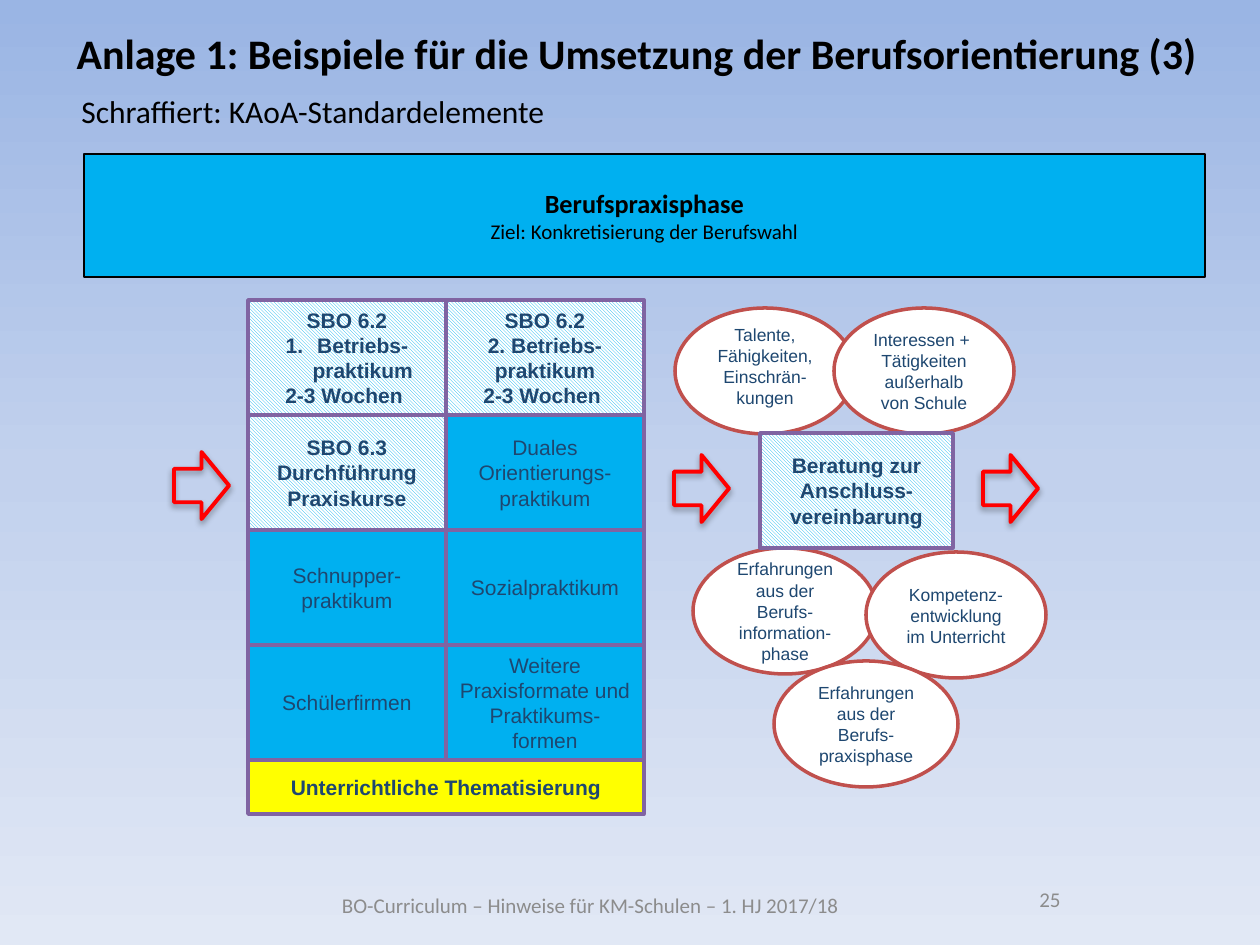
import copy
import dataclasses
import pptx
import pptx.dml.color
import pptx.enum.dml
import pptx.enum.shapes
import pptx.enum.text
import pptx.oxml
import pptx.oxml.ns
import pptx.util

FORM = pptx.enum.shapes.MSO_SHAPE
ALIGN = pptx.enum.text.PP_ALIGN
ANCHOR = pptx.enum.text.MSO_ANCHOR


@dataclasses.dataclass(frozen=True)
class Theme:
    black: str = "000000"
    white: str = "FFFFFF"
    grey: str = "8C8C8C"
    navy: str = "1E4770"
    blue: str = "00B0F0"
    yellow: str = "FFFF00"
    purple: str = "8064A2"
    brick: str = "C0504D"
    red: str = "FF0000"
    sky: tuple = ("9AB5E4", "C2D1ED", "E1E8F5")
    head: int = 24
    sub: int = 18
    lead: int = 15
    body: int = 12
    small: int = 10
    sans: str = "Calibri"
    plain: str = "Arial"


def px(num):
    return pptx.util.Emu(round(num * 914400 / 126))


def rgb(code):
    return pptx.dml.color.RGBColor.from_string(code)


class Deck:
    def __init__(self, theme):
        self.theme = theme
        self.show = pptx.Presentation()
        self.show.slide_width = px(1260)
        self.show.slide_height = px(945)
        self.slide = self.show.slides.add_slide(self.show.slide_layouts[5])

    def sky(self):
        fill = self.slide.background.fill
        fill.gradient()
        fill.gradient_angle = 270
        first = self.slide.element.find(".//" + pptx.oxml.ns.qn("a:gs"))
        first.addnext(copy.deepcopy(first))
        for num, (stop, code) in enumerate(zip(fill.gradient_stops, self.theme.sky)):
            stop.color.rgb = rgb(code)
            stop.position = num / 2

    def letter(self, shape, text, size, color, font, bold=False,
               align=ALIGN.CENTER, anchor=ANCHOR.MIDDLE, wrap=True):
        frame = shape.text_frame
        frame.text = text
        frame.word_wrap = wrap
        frame.auto_size = pptx.enum.text.MSO_AUTO_SIZE.NONE
        frame.vertical_anchor = anchor
        for para in frame.paragraphs:
            para.alignment = align
            for run in para.runs:
                run.font.size = pptx.util.Pt(size)
                run.font.name = font
                run.font.bold = bold
                run.font.color.rgb = rgb(color)

    def title(self, box, text):
        shape = self.slide.shapes.title
        shape.left, shape.top, shape.width, shape.height = map(px, box)
        self.letter(shape, text, self.theme.head, self.theme.black, self.theme.sans,
                    True, ALIGN.LEFT, ANCHOR.TOP)

    def label(self, box, text, size, color, **style):
        shape = self.slide.shapes.add_textbox(*map(px, box))
        self.letter(shape, text, size, color, self.theme.sans, **style)

    def shape(self, form, box, fill, line, width):
        shape = self.slide.shapes.add_shape(form, *map(px, box))
        shape.shadow.inherit = False
        if fill:
            shape.fill.solid()
            shape.fill.fore_color.rgb = rgb(fill)
        else:
            shape.fill.background()
        shape.line.color.rgb = rgb(line)
        shape.line.width = pptx.util.Pt(width)
        return shape

    def banner(self, box, text):
        look = self.theme
        shape = self.shape(FORM.RECTANGLE, box, look.blue, look.black, 1.5)
        self.letter(shape, text, look.body, look.black, look.sans, wrap=False)
        font = shape.text_frame.paragraphs[0].runs[0].font
        font.size = pptx.util.Pt(look.lead)
        font.bold = True

    def card(self, box, text, fill=None, bold=False):
        look = self.theme
        shape = self.shape(FORM.RECTANGLE, box, fill or look.blue, look.purple, 2)
        self.letter(shape, text, look.body, look.navy, look.plain, bold)
        return shape

    def hatch(self, box, text):
        shape = self.card(box, text, bold=True)
        shape.fill.patterned()
        shape.fill.pattern = pptx.enum.dml.MSO_PATTERN.LIGHT_DOWNWARD_DIAGONAL
        shape.fill.fore_color.rgb = rgb(self.theme.blue)
        shape.fill.back_color.rgb = rgb(self.theme.white)
        return shape

    def count(self, para):
        props = para._p.get_or_add_pPr()
        props.set("marL", "228600")
        props.set("indent", "-228600")
        mark = pptx.oxml.parse_xml(
            f'<a:buAutoNum {pptx.oxml.ns.nsdecls("a")} type="arabicPeriod"/>')
        props.append(mark)

    def bubble(self, box, text, foot=6):
        look = self.theme
        shape = self.shape(FORM.OVAL, box, look.white, look.brick, 2)
        self.letter(shape, text, look.small, look.navy, look.plain)
        shape.text_frame.margin_bottom = px(foot)

    def arrow(self, left, top):
        shape = self.shape(FORM.RIGHT_ARROW, (left, top, 55, 67), None, self.theme.red, 2.25)
        glow = shape._element.spPr.find(pptx.oxml.ns.qn("a:effectLst"))
        glow.append(pptx.oxml.parse_xml(
            f'<a:outerShdw {pptx.oxml.ns.nsdecls("a")} blurRad="44450" dist="27940" '
            'dir="5400000" rotWithShape="0"><a:srgbClr val="000000">'
            '<a:alpha val="32000"/></a:srgbClr></a:outerShdw>'))


def main():
    look = Theme()
    deck = Deck(look)
    deck.sky()
    deck.title((64, 21, 1202, 63),
               "Anlage 1: Beispiele für die Umsetzung der Berufsorientierung (3)")
    deck.label((69, 86, 501, 50), "Schraffiert: KAoA-Standardelemente", look.sub,
               look.black, align=ALIGN.LEFT, anchor=ANCHOR.TOP, wrap=False)
    deck.label((273, 880, 635, 50), "BO-Curriculum – Hinweise für KM-Schulen – 1. HJ 2017/18",
               look.body, look.grey)
    deck.label((903, 880, 294, 50), "25", look.body, look.grey, anchor=ANCHOR.TOP)
    deck.banner((84, 154, 1121, 123), "Berufspraxisphase\nZiel: Konkretisierung der Berufswahl")

    left, top, wide, high = 248, 300, 198, 115
    grid = [
        [(deck.hatch, "SBO 6.2\nBetriebs-praktikum\n2-3 Wochen "),
         (deck.hatch, "SBO 6.2\n2. Betriebs-praktikum\n2-3 Wochen ")],
        [(deck.hatch, "SBO 6.3\nDurchführung\nPraxiskurse"),
         (deck.card, "Duales Orientierungs-praktikum")],
        [(deck.card, "Schnupper-praktikum"), (deck.card, "Sozialpraktikum")],
        [(deck.card, "Schülerfirmen"),
         (deck.card, "Weitere Praxisformate und Praktikums-formen")],
    ]
    cells = [[draw((left + col * wide, top + row * high, wide, high), text)
              for col, (draw, text) in enumerate(line)]
             for row, line in enumerate(grid)]
    deck.count(cells[0][0].text_frame.paragraphs[1])
    deck.card((left, top + len(grid) * high, 2 * wide, 54),
              "Unterrichtliche Thematisierung", look.yellow, True)

    deck.bubble((675, 308, 180, 126), "Talente,\nFähigkeiten,\nEinschrän-kungen", 16)
    for box, text in [
        ((834, 308, 180, 126), "Interessen + \nTätigkeiten außerhalb von Schule"),
        ((693, 548, 184, 126), "Erfahrungen aus der Berufs-information-phase"),
        ((866, 552, 180, 126), "Kompetenz-entwicklung im Unterricht"),
        ((774, 661, 184, 126), "Erfahrungen aus der Berufs-praxisphase"),
    ]:
        deck.bubble(box, text)
    deck.hatch((760, 433, 193, 115), "Beratung zur Anschluss-vereinbarung")
    for spot in [(174, 452), (674, 455), (983, 455)]:
        deck.arrow(*spot)
    deck.show.save("out.pptx")


if __name__ == "__main__":
    main()
